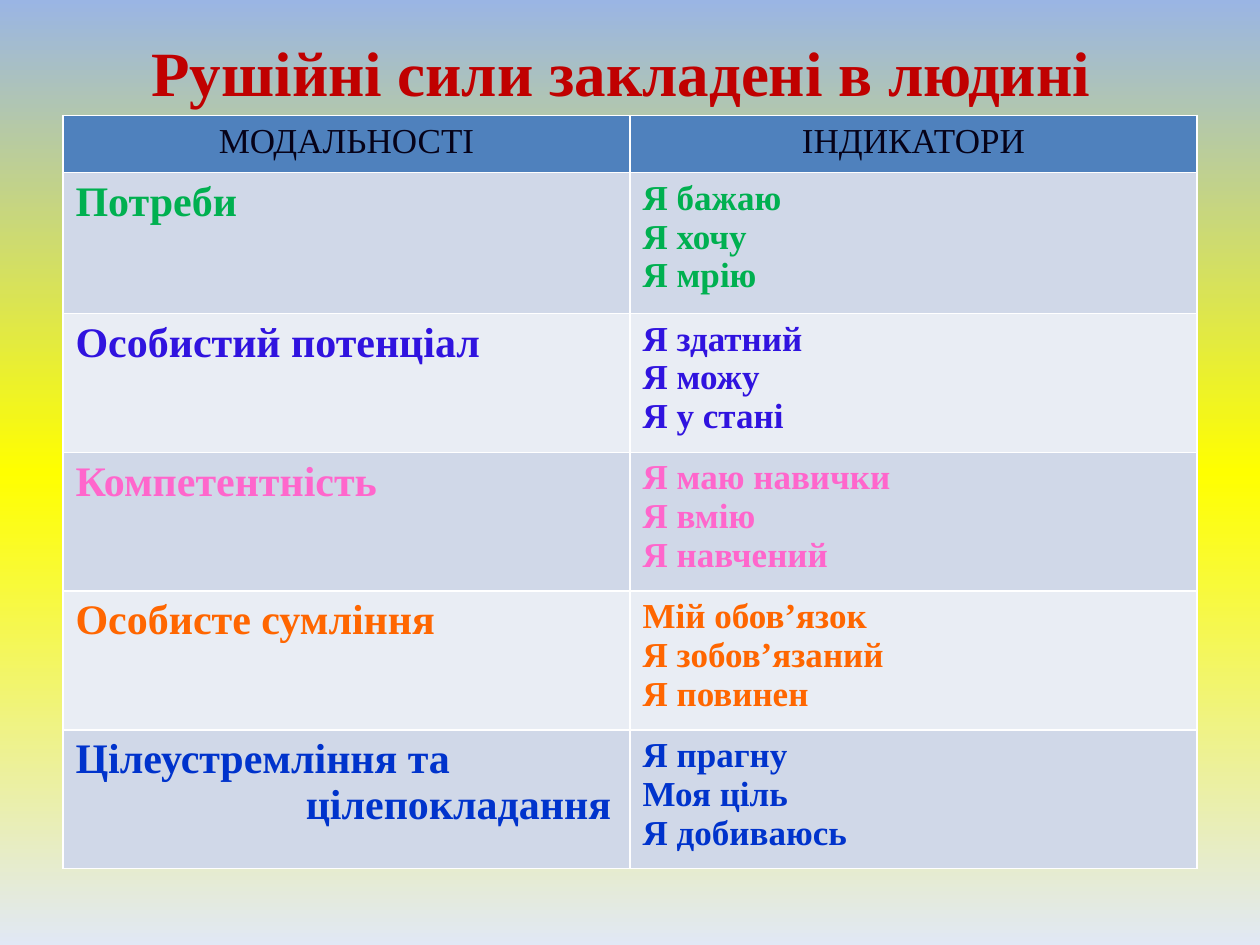
from copy import deepcopy

from lxml.etree import SubElement
from pptx import Presentation
from pptx.dml.color import RGBColor
from pptx.enum.text import MSO_ANCHOR as Anchor, PP_ALIGN as Align
from pptx.oxml.ns import qn
from pptx.util import Cm, Pt

FONT = "Times New Roman"
HEADER_FILL = "4F81BD"
BAND_FILLS = ["D0D8E8", "E9EDF4"]
HEADINGS = ["МОДАЛЬНОСТІ", "ІНДИКАТОРИ"]
ROW_HEIGHTS = [1.15, 2.84, 2.8, 2.8, 2.6, 2.6]
SECOND_LINE_INDENT = 4.64

# Modality lines, indicator lines, text colour
MODALITIES = [
    (["Потреби"], ["Я бажаю", "Я хочу", "Я мрію"], "00B050"),
    (["Особистий потенціал"], ["Я здатний", "Я можу", "Я у стані"], "3013DF"),
    (["Компетентність"], ["Я маю навички", "Я вмію", "Я навчений"], "FF66CC"),
    (["Особисте сумління"],
     ["Мій обов’язок", "Я зобов’язаний", "Я повинен"], "FF6600"),
    (["Цілеустремління та", "цілепокладання"],
     ["Я прагну", "Моя ціль", "Я добиваюсь"], "0033CC"),
]


def rgb(value):
    return RGBColor.from_string(value)


def write(frame, lines, size, color, bold=True, align=Align.LEFT, indent=0):
    """Write one paragraph per line; indent (cm) applies after the first."""
    for index, line in enumerate(lines):
        para = frame.add_paragraph() if index else frame.paragraphs[0]
        para.alignment = align
        if index and indent:
            para._p.get_or_add_pPr().set("marL", str(Cm(indent)))
        span = para.add_run()
        span.text = line
        span.font.name = FONT
        span.font.size = Pt(size)
        span.font.bold = bold
        span.font.color.rgb = rgb(color)


def paint_background(page, colors):
    """Vertical gradient with evenly spaced stops."""
    fill = page.background.fill
    fill.gradient()
    fill.gradient_angle = 270
    stop_list = page.element.find(".//" + qn("a:gsLst"))
    while len(stop_list) < len(colors):
        stop_list.append(deepcopy(stop_list[0]))
    for index, (stop, color) in enumerate(zip(fill.gradient_stops, colors)):
        stop.position = index / (len(colors) - 1)
        stop.color.rgb = rgb(color)


def add_title(page, left, top, width, height, text):
    box = page.shapes.add_textbox(Cm(left), Cm(top), Cm(width), Cm(height))
    frame = box.text_frame
    frame.word_wrap = True
    frame.vertical_anchor = Anchor.MIDDLE
    write(frame, [text], size=36, color="C00000", align=Align.CENTER)


def style_cell(cell, fill, border="FFFFFF", weight=1):
    props = cell._tc.get_or_add_tcPr()
    for side in ("lnL", "lnR", "lnT", "lnB"):
        line = SubElement(props, qn("a:" + side), w=str(Pt(weight)))
        solid = SubElement(line, qn("a:solidFill"))
        SubElement(solid, qn("a:srgbClr"), val=border)
    cell.fill.solid()
    cell.fill.fore_color.rgb = rgb(fill)


def add_modality_table(page, left, top, width):
    shape = page.shapes.add_table(
        len(ROW_HEIGHTS), len(HEADINGS),
        Cm(left), Cm(top), Cm(width), Cm(sum(ROW_HEIGHTS)))
    table = shape.table
    for column in table.columns:
        column.width = Cm(width / len(HEADINGS))
    for row, height in zip(table.rows, ROW_HEIGHTS):
        row.height = Cm(height)

    # Header row
    for cell, heading in zip(table.rows[0].cells, HEADINGS):
        style_cell(cell, HEADER_FILL)
        write(cell.text_frame, [heading], size=20, color="060218",
              bold=False, align=Align.CENTER)

    # Banded body rows
    for index, (names, indicators, color) in enumerate(MODALITIES):
        name_cell, indicator_cell = table.rows[index + 1].cells
        for cell in (name_cell, indicator_cell):
            style_cell(cell, BAND_FILLS[index % 2])
        write(name_cell.text_frame, names, size=24, color=color,
              indent=SECOND_LINE_INDENT)
        write(indicator_cell.text_frame, indicators, size=20, color=color)


def main():
    deck = Presentation()
    deck.slide_width, deck.slide_height = Cm(25.4), Cm(19.05)
    page = deck.slides.add_slide(deck.slide_layouts[6])
    paint_background(page, ["9AB5E4", "FFFF00", "E1E8F5"])
    add_title(page, 1.09, 0.53, 22.86, 1.8, "Рушійні сили закладені в людині")
    add_modality_table(page, 1.27, 2.33, 22.86)
    deck.save("out.pptx")


if __name__ == "__main__":
    main()
